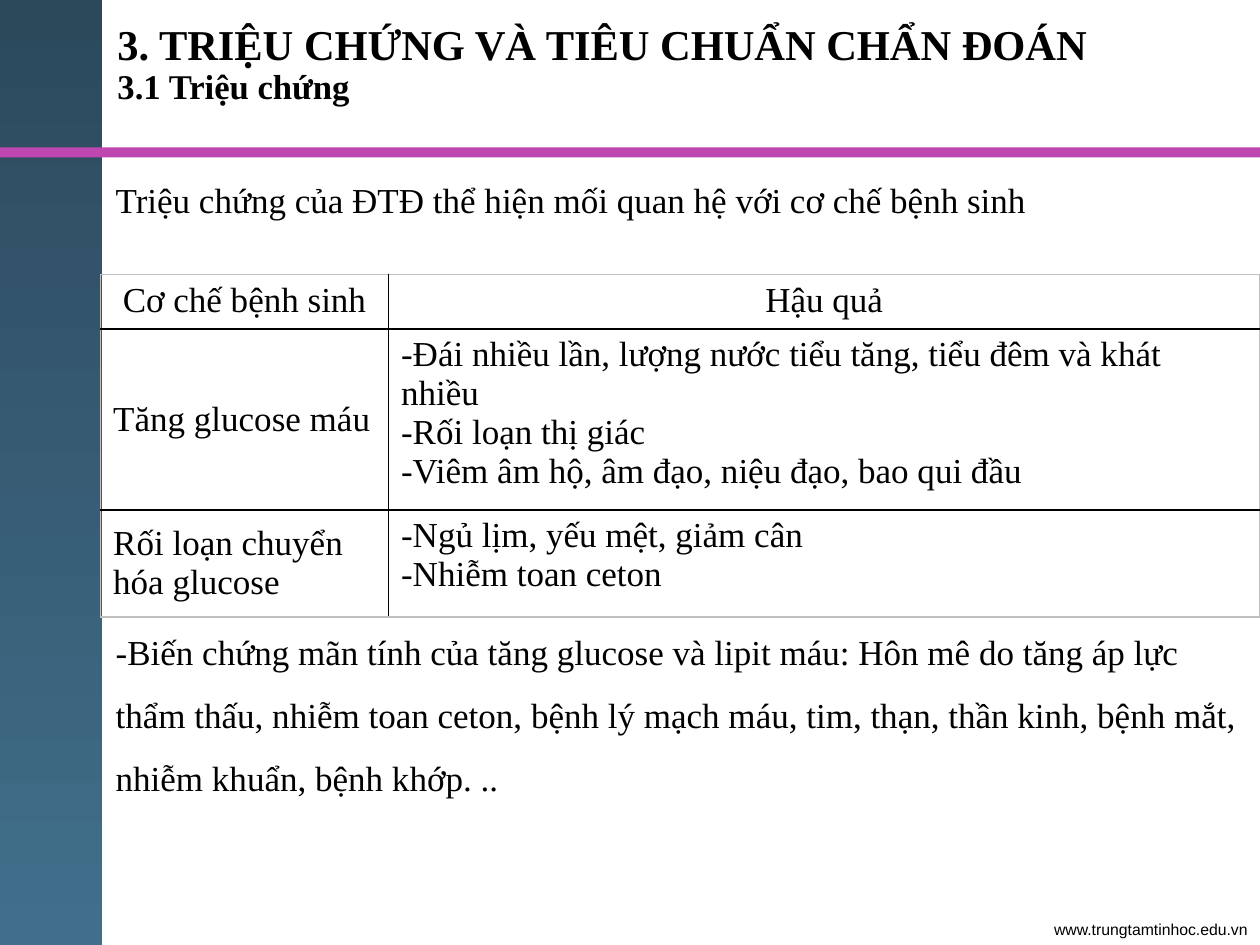
import pptx
import pptx.util
import pptx.dml.color
import pptx.enum.shapes
import pptx.enum.text
import pptx.oxml

Pt = pptx.util.Pt
Align = pptx.enum.text.PP_ALIGN
Anchor = pptx.enum.text.MSO_ANCHOR

WIDE, HIGH = 720, 540
SERIF = "Times New Roman"
BLACK, GREY = "000000", "C0C0C0"
TITLE = ["3. TRIỆU CHỨNG VÀ TIÊU CHUẨN CHẨN ĐOÁN"]
SUB = ["3.1 Triệu chứng"]
INTRO = ["Triệu chứng của ĐTĐ thể hiện mối quan hệ với cơ chế bệnh sinh"]
CLOSE = ["-Biến chứng mãn tính của tăng glucose và lipit máu: Hôn mê do tăng áp lực "
         "thẩm thấu, nhiễm toan ceton, bệnh lý mạch máu, tim, thạn, thần kinh, "
         "bệnh mắt, nhiễm khuẩn, bệnh khớp. .."]
SITE = ["www.trungtamtinhoc.edu.vn"]
ROWS = [
    (["Cơ chế bệnh sinh"], ["Hậu quả"]),
    (["Tăng glucose máu"],
     ["-Đái nhiều lần, lượng nước tiểu tăng, tiểu đêm và khát nhiều",
      "-Rối loạn thị giác",
      "-Viêm âm hộ, âm đạo, niệu đạo, bao qui đầu"]),
    (["Rối loạn chuyển hóa glucose"],
     ["-Ngủ lịm, yếu mệt, giảm cân", "-Nhiễm toan ceton"]),
]
COLS = [164.5, 498]
TALL = [30.3, 96, 61.2]


def color(code):
    return pptx.dml.color.RGBColor.from_string(code)


def write(frame, lines, size=20, font=SERIF, bold=False, align=Align.LEFT, pitch=None):
    for i, line in enumerate(lines):
        para = frame.add_paragraph() if i else frame.paragraphs[0]
        para.alignment = align
        if pitch:
            para.line_spacing = Pt(pitch)
        run = para.add_run()
        run.text = line
        run.font.size, run.font.name, run.font.bold = Pt(size), font, bold
        run.font.color.rgb = color(BLACK)


def label(slide, lines, x, y, w, h, wrap=True, **form):
    frame = slide.shapes.add_textbox(Pt(x), Pt(y), Pt(w), Pt(h)).text_frame
    frame.word_wrap = wrap
    frame.margin_top = frame.margin_bottom = 0
    write(frame, lines, **form)


def bar(slide, x, y, w, h):
    kind = pptx.enum.shapes.MSO_SHAPE.RECTANGLE
    shape = slide.shapes.add_shape(kind, Pt(x), Pt(y), Pt(w), Pt(h))
    shape.shadow.inherit = False
    shape.line.fill.background()
    return shape.fill


def border(cell, sides):
    """Draw 1 pt cell borders; sides maps L, R, T, B to colours."""
    props = cell._tc.get_or_add_tcPr()
    space = "http://schemas.openxmlformats.org/drawingml/2006/main"
    for i, (side, code) in enumerate(sides.items()):
        props.insert(i, pptx.oxml.parse_xml(
            f'<a:ln{side} xmlns:a="{space}" w="12700"><a:solidFill>'
            f'<a:srgbClr val="{code}"/></a:solidFill></a:ln{side}>'))


def grid(slide, x, y):
    table = slide.shapes.add_table(len(ROWS), len(COLS), Pt(x), Pt(y),
                                   Pt(sum(COLS)), Pt(sum(TALL))).table
    for col, w in zip(table.columns, COLS):
        col.width = Pt(w)
    for r, row in enumerate(ROWS):
        table.rows[r].height = Pt(TALL[r])
        for c, lines in enumerate(row):
            cell = table.cell(r, c)
            cell.fill.background()
            cell.vertical_anchor = Anchor.MIDDLE if r and not c else Anchor.TOP
            write(cell.text_frame, lines, align=Align.LEFT if r else Align.CENTER)
            border(cell, {
                "L": BLACK if c else GREY,
                "R": GREY if c == len(COLS) - 1 else BLACK,
                "T": BLACK if r else GREY,
                "B": GREY if r == len(ROWS) - 1 else BLACK,
            })


def main():
    deck = pptx.Presentation()
    deck.slide_width, deck.slide_height = Pt(WIDE), Pt(HIGH)
    slide = deck.slides.add_slide(deck.slide_layouts[6])

    side = bar(slide, 0, 0, 58.3, HIGH)
    side.gradient()
    side.gradient_angle = 270
    for stop, code in zip(side.gradient_stops, ("2C495C", "416F8B")):
        stop.color.rgb = color(code)
    rule = bar(slide, 0, 84.2, WIDE, 5.8)
    rule.solid()
    rule.fore_color.rgb = color("BE46B0")

    label(slide, SITE, 593.3, 525.6, 126.7, 12, wrap=False, size=9,
          font="Arial", align=Align.RIGHT)
    label(slide, TITLE, 60, 10, 660, 27, size=24.3, bold=True)
    label(slide, SUB, 60, 37, 660, 22, size=19.8, bold=True)
    label(slide, INTRO, 59, 102, 661, 23)
    label(slide, CLOSE, 59, 348.3, 661, 108, pitch=36)
    grid(slide, 57.5, 156.8)
    deck.save("out.pptx")


if __name__ == "__main__":
    main()
